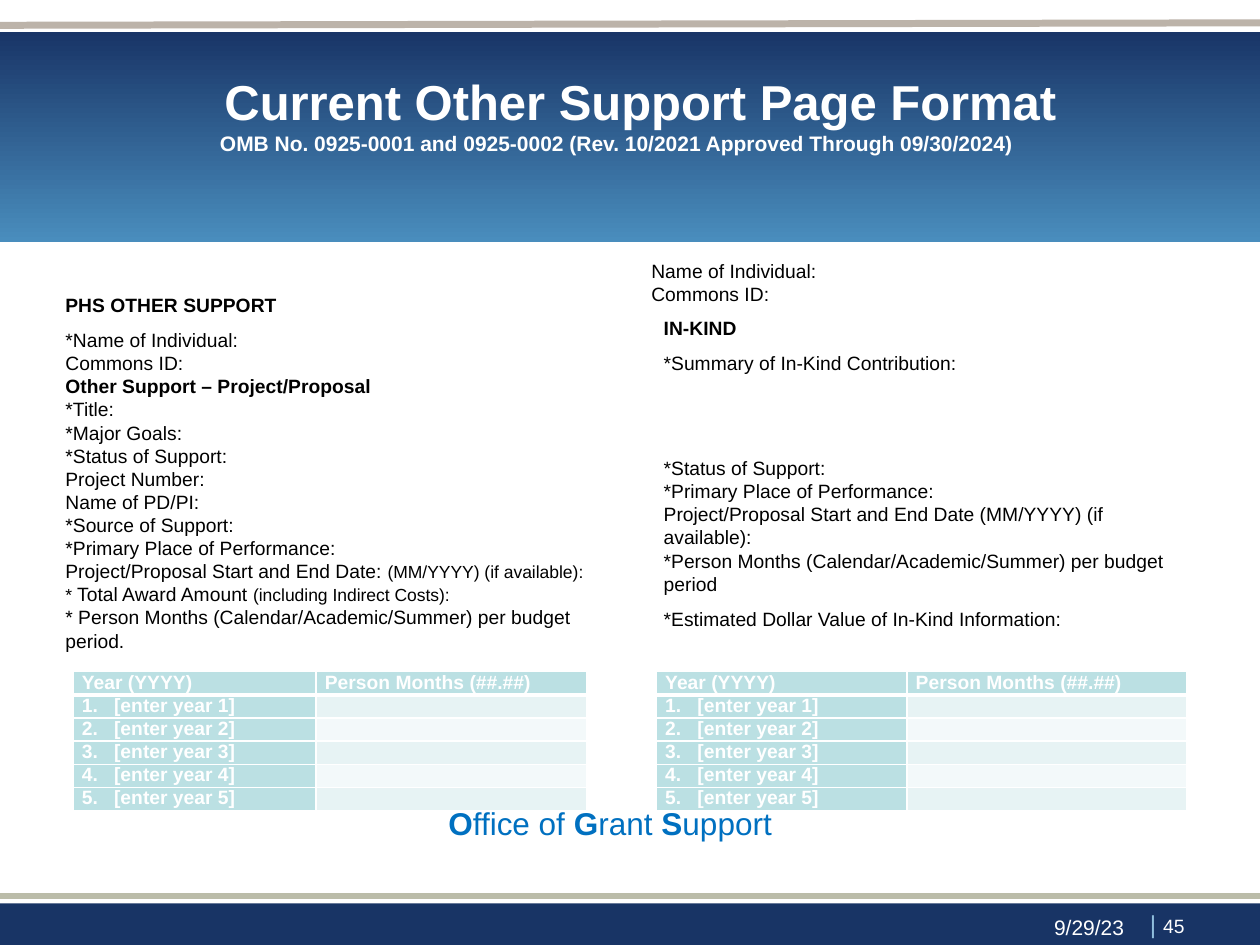
from collections import namedtuple

from lxml.etree import SubElement
from pptx import Presentation
from pptx.dml.color import RGBColor
from pptx.enum.shapes import MSO_CONNECTOR, MSO_SHAPE
from pptx.enum.text import MSO_ANCHOR, PP_ALIGN
from pptx.oxml.ns import qn
from pptx.util import Cm, Pt

WHITE = RGBColor(0xFF, 0xFF, 0xFF)
BLACK = RGBColor(0, 0, 0)
NAVY = RGBColor(0x18, 0x34, 0x65)
BANNER_TOP = RGBColor(0x19, 0x35, 0x67)
BANNER_BOTTOM = RGBColor(0x49, 0x8D, 0xBD)
TAUPE = RGBColor(0xBC, 0xB3, 0xA9)
SAGE = RGBColor(0xBB, 0xBC, 0xA9)
SKY = RGBColor(0x8F, 0xBE, 0xDC)
OFFICE_BLUE = RGBColor(0x00, 0x70, 0xC0)
TEAL = RGBColor(0xBB, 0xE0, 0xE3)
BAND_DARK = RGBColor(0xE7, 0xF3, 0xF4)
BAND_LIGHT = RGBColor(0xF3, 0xF9, 0xFA)

FONT = "Arial"
SLIDE_W, SLIDE_H = 25.4, 19.05
SMALL_GAP = 7
IN_KIND_GAP = 46.8

Box = namedtuple("Box", "left top width height")
Run = namedtuple("Run", "text size bold color", defaults=(11, False, BLACK))
Line = namedtuple("Line", "runs gap", defaults=(0,))


def place(box):
    return [Cm(length) for length in box]


def plain(text, gap=0):
    return Line([Run(text)], gap)


def heading(text):
    return Line([Run(text, bold=True)])


def style(run, size, bold, color):
    run.font.name = FONT
    run.font.size = Pt(size)
    run.font.bold = bold
    run.font.color.rgb = color


def add_text(slide, box, lines, align=PP_ALIGN.LEFT, anchor=MSO_ANCHOR.TOP, wrap=True):
    frame = slide.shapes.add_textbox(*place(box)).text_frame
    frame.word_wrap = wrap
    frame.vertical_anchor = anchor
    for index, line in enumerate(lines):
        paragraph = frame.add_paragraph() if index else frame.paragraphs[0]
        paragraph.alignment = align
        if line.gap:
            paragraph.space_before = Pt(line.gap)
        for part in line.runs:
            run = paragraph.add_run()
            run.text = part.text
            style(run, part.size, part.bold, part.color)
    return frame


def add_band(slide, box):
    band = slide.shapes.add_shape(MSO_SHAPE.RECTANGLE, *place(box))
    band.shadow.inherit = False
    band.line.fill.background()
    return band


def add_rule(slide, start_y, end_y, color, width):
    rule = slide.shapes.add_connector(
        MSO_CONNECTOR.STRAIGHT, 0, Cm(start_y), Cm(SLIDE_W), Cm(end_y))
    rule.line.color.rgb = color
    rule.line.width = Pt(width)
    SubElement(rule._element.spPr, qn("a:effectLst"))


def add_banner(slide, box):
    banner = add_band(slide, box)
    banner.fill.gradient()
    banner.fill.gradient_angle = 270
    for stop, color, position in zip(
            banner.fill.gradient_stops, (BANNER_TOP, BANNER_BOTTOM), (0, 1)):
        stop.color.rgb = color
        stop.position = position
    add_rule(slide, box.top - 0.13, box.top - 0.18, TAUPE, 4)

    title = add_text(slide, Box(box.left + 1.9, box.top + 0.73, 22.02, 2.84), [
        Line([Run("Current Other Support Page Format", 28, True, WHITE)]),
        Line([Run("OMB No. 0925-0001 and 0925-0002 "
                  "(Rev. 10/2021 Approved Through 09/30/2024)", 12, True, WHITE)]),
    ], PP_ALIGN.CENTER)
    title.margin_top = Cm(0.08)
    title.paragraphs[1]._p.get_or_add_pPr().set("marR", str(Cm(0.95)))


def add_footer(slide, box):
    bar = add_band(slide, box)
    bar.fill.solid()
    bar.fill.fore_color.rgb = NAVY
    add_rule(slide, box.top - 0.15, box.top - 0.15, SAGE, 3)
    add_text(slide, Box(box.left + 22.23, box.top, 1.9, box.height), [
        Line([Run("| ", 14, False, SKY), Run("45", 11, False, WHITE)]),
    ], PP_ALIGN.RIGHT)
    add_text(slide, Box(box.left + 15.77, box.top + 0.1, 7.14, 0.74), [
        Line([Run("9/29/23", 12, False, WHITE)]),
    ], PP_ALIGN.RIGHT)


def set_borders(cell, bottom_width):
    properties = cell._tc.get_or_add_tcPr()
    for index, (side, width) in enumerate(
            (("lnL", 1), ("lnR", 1), ("lnT", 1), ("lnB", bottom_width))):
        border = properties.makeelement(qn(f"a:{side}"), {"w": str(Pt(width))})
        properties.insert(index, border)
        fill = SubElement(border, qn("a:solidFill"))
        SubElement(fill, qn("a:srgbClr"), val=str(WHITE))


def add_months_table(slide, box, year_width):
    rows = [("Year (YYYY)", "Person Months (##.##)")]
    rows += [(f"{year}.\t[enter year {year}]", "") for year in range(1, 6)]
    table = slide.shapes.add_table(len(rows), 2, *place(box)).table
    table.columns[0].width = Cm(year_width)
    table.columns[1].width = Cm(box.width - year_width)
    for row_index, row in enumerate(rows):
        table.rows[row_index].height = Cm(box.height / len(rows))
        for column, text in enumerate(row):
            cell = table.cell(row_index, column)
            cell.margin_left = cell.margin_right = Cm(0.18)
            cell.margin_top = cell.margin_bottom = 0
            cell.fill.solid()
            if row_index == 0 or column == 0:
                cell.fill.fore_color.rgb = TEAL
            else:
                cell.fill.fore_color.rgb = BAND_DARK if row_index % 2 else BAND_LIGHT
            set_borders(cell, 1 if row_index else 3)
            paragraph = cell.text_frame.paragraphs[0]
            paragraph.text = text
            if row_index and column == 0:
                numbering = paragraph._p.get_or_add_pPr()
                numbering.set("marL", str(Cm(0.65)))
                numbering.set("indent", str(-Cm(0.65)))
            paragraph.font.size = Pt(11)
            for run in paragraph.runs:
                style(run, 11, True, WHITE)


def add_project_column(slide, box):
    add_text(slide, Box(box.left, box.top + 0.64, box.width, 7.57), [
        heading("PHS OTHER SUPPORT"),
        plain("*Name of Individual:", SMALL_GAP),
        plain("Commons ID:"),
        heading("Other Support – Project/Proposal"),
        plain("*Title:"),
        plain("*Major Goals:"),
        plain("*Status of Support:"),
        plain("Project Number:"),
        plain("Name of PD/PI:"),
        plain("*Source of Support:"),
        plain("*Primary Place of Performance:"),
        Line([Run("Project/Proposal Start and End Date: "),
              Run("(MM/YYYY) (if available):", 10)]),
        Line([Run("*", 10), Run(" Total Award Amount "),
              Run("(including Indirect Costs):", 10)]),
        plain("* Person Months (Calendar/Academic/Summer) per budget period."),
    ], anchor=MSO_ANCHOR.MIDDLE)
    add_months_table(slide, Box(box.left + 0.4, box.top + 8.44, 10.36, 2.6), 4.9)


def add_in_kind_column(slide, box):
    add_text(slide, Box(box.left - 0.25, box.top, 11.05, 1.19), [
        plain("Name of Individual:"),
        plain("Commons ID:"),
    ])
    add_text(slide, Box(box.left, box.top + 1.1, box.width, 6.68), [
        heading("IN-KIND"),
        plain("*Summary of In-Kind Contribution:", SMALL_GAP),
        plain("*Status of Support:", IN_KIND_GAP),
        plain("*Primary Place of Performance:"),
        plain("Project/Proposal Start and End Date (MM/YYYY) (if available):"),
        plain("*Person Months (Calendar/Academic/Summer) per budget period"),
        plain("*Estimated Dollar Value of In-Kind Information:", SMALL_GAP),
    ], anchor=MSO_ANCHOR.MIDDLE)
    add_months_table(slide, Box(box.left + 0.1, box.top + 8.44, 10.69, 2.6), 5.05)


def add_office_name(slide, box):
    words = ("O", "ffice of ", "G", "rant ", "S", "upport")
    runs = [Run(word, 18, index % 2 == 0, OFFICE_BLUE) for index, word in enumerate(words)]
    add_text(slide, box, [Line(runs)], wrap=False)


def main():
    deck = Presentation()
    deck.slide_width, deck.slide_height = Cm(SLIDE_W), Cm(SLIDE_H)
    slide = deck.slides.add_slide(deck.slide_layouts[6])
    add_footer(slide, Box(0, 18.21, SLIDE_W, 0.84))
    add_banner(slide, Box(0, 0.64, SLIDE_W, 4.24))
    add_project_column(slide, Box(1.07, 5.1, 11, 11.04))
    add_in_kind_column(slide, Box(13.13, 5.1, 11, 11.04))
    add_office_name(slide, Box(8.79, 16.08, 7.09, 1.02))
    deck.save("out.pptx")


if __name__ == "__main__":
    main()
